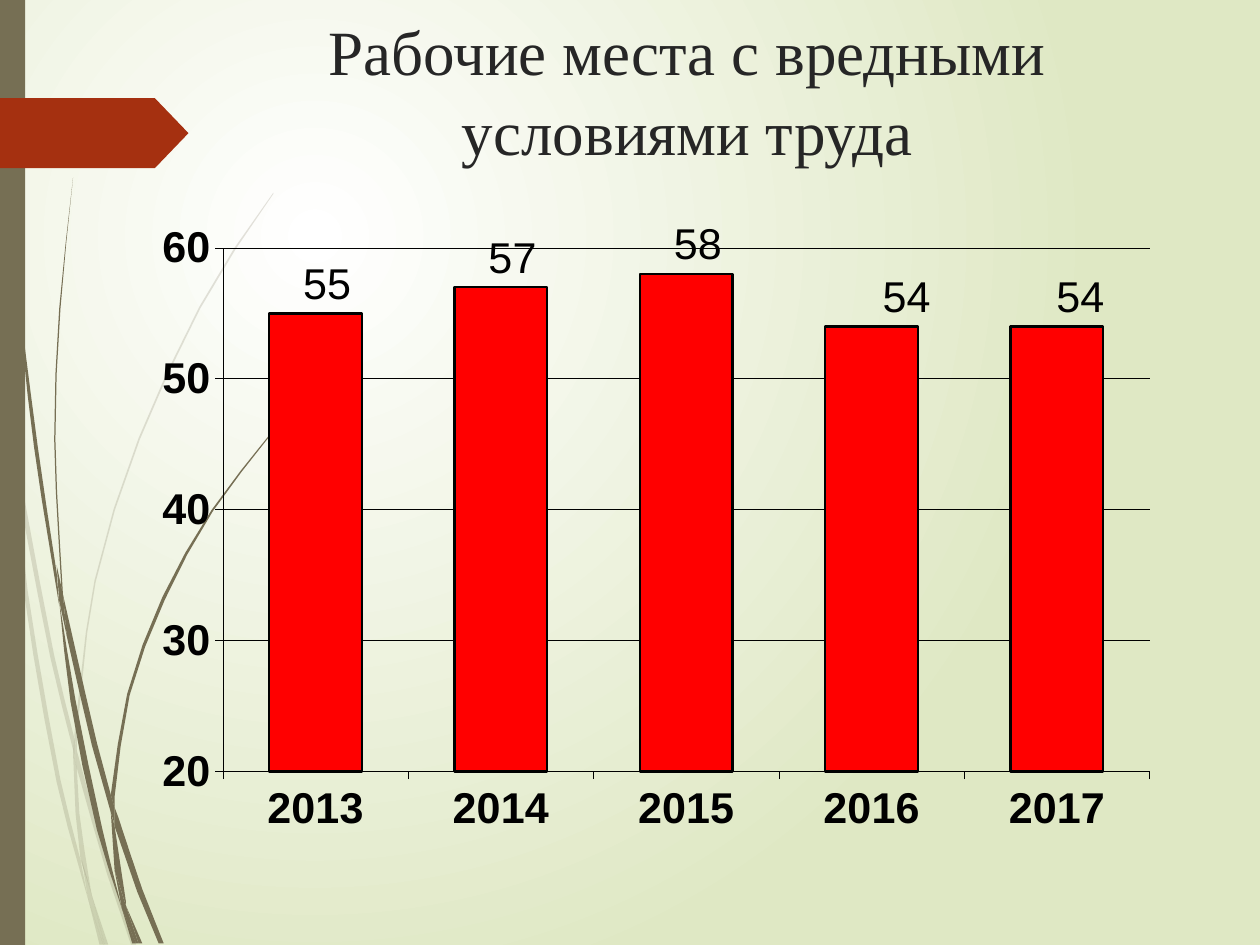
import math

import pptx
import pptx.chart.data
import pptx.dml.color
import pptx.enum.chart
import pptx.enum.shapes
import pptx.enum.text
import pptx.oxml
import pptx.oxml.ns
import pptx.util

Cm = pptx.util.Cm
Pt = pptx.util.Pt
RGBColor = pptx.dml.color.RGBColor

OLIVE = RGBColor(0x76, 0x6F, 0x54)
RUST = RGBColor(0xA5, 0x30, 0x10)
RED = RGBColor(0xFF, 0x00, 0x00)
BLACK = RGBColor(0x00, 0x00, 0x00)
WHITE = RGBColor(0xFF, 0xFF, 0xFF)
PALE_GREEN = RGBColor(0xDF, 0xE8, 0xC4)
CHARCOAL = RGBColor(0x26, 0x26, 0x26)
AXIS_SIZE = Pt(24.6)
NS = pptx.oxml.ns.nsdecls

PALE_BLADES = [
    [[(8, 350), (6, 322), (0, 282)], [(0, 299), (7, 344)]],
    [[(10, 345), (43, 520), (59, 586)], [(59, 599), (40, 522), (12, 376)]],
    [[(61, 596), (64, 607), (88, 692), (108, 750)], [(104, 750), (85, 694), (61, 610)]],
    [[(73, 711), (83, 750)], [(86, 750), (73, 711)]],
    [[(8, 350), (12, 376), (22, 469), (48, 619), (64, 683), (70, 714)],
     [(70, 714), (64, 693), (45, 621), (19, 470), (8, 350)]],
    [[(58, 599), (60, 646), (64, 683), (73, 711)], [(72, 706), (63, 646), (61, 610)]],
    [[(61, 596), (61, 584), (76, 462), (111, 349), (159, 245), (187, 198), (217, 154)],
     [(217, 153), (186, 197), (158, 244), (110, 348), (75, 461), (59, 584)]],
    [[(70, 714), (79, 750)], [(82, 750), (70, 714)]],
    [[(58, 599), (61, 610)], [(61, 596), (59, 586)]],
    [[(65, 683), (70, 714), (82, 750)], [(83, 750), (73, 711), (65, 683)]],
]
DARK_BLADES = [
    [[(2, 0), (5, 110), (14, 233), (27, 355), (47, 481)],
     [(45, 455), (30, 355), (15, 232), (6, 109), (3, 0)]],
    [[(50, 472), (77, 590), (88, 631)], [(88, 645), (73, 592), (53, 505)]],
    [[(91, 641), (94, 649), (113, 706), (130, 749)], [(126, 749), (109, 708), (91, 656)]],
    [[(47, 477), (60, 556), (81, 657), (97, 722)],
     [(97, 722), (77, 659), (56, 557), (47, 477)]],
    [[(50, 472), (44, 349), (48, 245), (58, 141)],
     [(58, 141), (47, 245), (43, 349), (49, 472)]],
    [[(100, 719), (110, 749)], [(113, 749), (100, 719)]],
    [[(45, 449), (50, 472)], [(53, 505), (47, 477)]],
    [[(91, 641), (91, 633), (103, 552), (131, 476), (169, 406), (216, 344)],
     [(215, 344), (168, 405), (129, 474), (101, 551), (88, 631)]],
    [[(97, 722), (105, 749)], [(108, 749), (97, 722)]],
    [[(88, 645), (91, 691), (100, 719)], [(100, 716), (91, 656)]],
    [[(88, 631), (91, 641), (91, 656)], [(90, 651), (88, 645)]],
    [[(91, 691), (97, 722), (108, 749)], [(110, 749), (100, 719)]],
]


def write_text(frame, text, *, font, size, color, align, line_spacing):
    frame.text = text
    paragraph = frame.paragraphs[0]
    paragraph.alignment = align
    paragraph.line_spacing = line_spacing
    paragraph.font.name = font
    paragraph.font.size = size
    paragraph.font.color.rgb = color


def smooth_edge(points):
    last = len(points) - 1
    spans = [math.dist(a, b) for a, b in zip(points, points[1:])]
    slopes = []
    for i in range(last + 1):
        before, after = max(i - 1, 0), min(i + 1, last)
        length = sum(spans[before:after])
        slopes.append([(points[after][k] - points[before][k]) / length for k in (0, 1)])
    curve = [points[0]]
    for i, span in enumerate(spans):
        steps = 1 + int(span // 60)
        for t in (step / steps for step in range(1, steps + 1)):
            curve.append(tuple(
                (2 * t**3 - 3 * t**2 + 1) * points[i][k]
                + (t**3 - 2 * t**2 + t) * span * slopes[i][k]
                + (3 * t**2 - 2 * t**3) * points[i + 1][k]
                + (t**3 - t**2) * span * slopes[i + 1][k]
                for k in (0, 1)))
    return [(10 * x, 10 * y) for x, y in curve]


deck = pptx.Presentation()
deck.slide_width, deck.slide_height = Cm(25.4), Cm(19.05)
slide = deck.slides.add_slide(deck.slide_layouts[5])

backdrop = slide.background.fill
backdrop.gradient()
for stop, color, position in zip(backdrop.gradient_stops, (WHITE, PALE_GREEN), (0, 1)):
    stop.color.rgb = color
    stop.position = position
linear = slide.background._cSld.find(".//" + pptx.oxml.ns.qn("a:lin"))
linear.getparent().replace(linear, pptx.oxml.parse_xml(
    f'<a:path {NS("a")} path="circle">'
    '<a:fillToRect l="50000" t="50000" r="100000" b="100000"/></a:path>'))

for blades, alpha in ((PALE_BLADES, 20000), (DARK_BLADES, 100000)):
    grass = slide.shapes.add_group_shape()
    for edges in blades:
        outline = [point for edge in edges for point in smooth_edge(edge)]
        builder = grass.shapes.build_freeform(*outline[0], scale=Cm(0.00254))
        builder.add_line_segments(outline[1:], close=True)
        blade = builder.convert_to_shape()
        blade.shadow.inherit = False
        blade.fill.solid()
        blade.fill.fore_color.rgb = OLIVE
        blade.line.fill.background()
        tint = blade.fill._xPr.find(".//" + pptx.oxml.ns.qn("a:srgbClr"))
        tint.append(pptx.oxml.parse_xml(f'<a:alpha {NS("a")} val="{alpha}"/>'))

PRESETS = pptx.enum.shapes.MSO_SHAPE
for preset, top, width, height, color in (
    (PRESETS.RECTANGLE, 0, 0.51, 19.05, OLIVE),
    (PRESETS.PENTAGON, 1.98, 3.8, 1.41, RUST),
):
    accent = slide.shapes.add_shape(preset, 0, Cm(top), Cm(width), Cm(height))
    accent.shadow.inherit = False
    accent.fill.solid()
    accent.fill.fore_color.rgb = color
    accent.line.fill.background()
accent.adjustments[0] = 0.48

title = slide.shapes.title
title.left, title.top, title.width, title.height = Cm(4.7), 0, Cm(18.31), Cm(3.56)
title.text_frame.vertical_anchor = pptx.enum.text.MSO_ANCHOR.MIDDLE
write_text(title.text_frame, "Рабочие места с вредными условиями труда",
           font="Times New Roman", size=Pt(36), color=CHARCOAL,
           align=pptx.enum.text.PP_ALIGN.CENTER, line_spacing=1.05)

workplaces = pptx.chart.data.CategoryChartData()
workplaces.categories = ["2013", "2014", "2015", "2016", "2017"]
workplaces.add_series("Series 1", (55, 57, 58, 54, 54))
chart = slide.shapes.add_chart(
    pptx.enum.chart.XL_CHART_TYPE.COLUMN_CLUSTERED,
    0, Cm(4.32), Cm(23.65), Cm(13.54), workplaces).chart
chart.has_legend = False
chart.has_title = False
chart.font.name = "Arial"
chart.font.size = AXIS_SIZE
chart.font.bold = True
chart.font.color.rgb = BLACK

years, counts = chart.category_axis, chart.value_axis
years.tick_label_position = pptx.enum.chart.XL_TICK_LABEL_POSITION.LOW
counts.minimum_scale, counts.maximum_scale, counts.major_unit = 20, 60, 10
for axis in (years, counts):
    axis.major_tick_mark = pptx.enum.chart.XL_TICK_MARK.OUTSIDE
for rule in (years.format.line, counts.format.line, counts.major_gridlines.format.line):
    rule.color.rgb = BLACK
    rule.width = Pt(0.34)

plot = chart.plots[0]
plot.gap_width = 100
plot.vary_by_categories = False
bars = plot.series[0]
bars.format.fill.solid()
bars.format.fill.fore_color.rgb = RED
bars.format.line.color.rgb = BLACK
bars.format.line.width = Pt(1.35)

bars.data_labels.show_value = True
for index, shift in enumerate((0.01, 0.01, 0.01, 0.03, 0.02)):
    label = bars.points[index].data_label
    label.font.bold = False
    label.font.size = AXIS_SIZE
    label.font.color.rgb = BLACK
    label.position = pptx.enum.chart.XL_LABEL_POSITION.OUTSIDE_END
    bars.data_labels._element.findall(pptx.oxml.ns.qn("c:dLbl"))[index].insert(
        1, pptx.oxml.parse_xml(
            f'<c:layout {NS("c")}><c:manualLayout><c:x val="{shift}"/>'
            '<c:y val="0"/></c:manualLayout></c:layout>'))

plot_area = chart._chartSpace.chart.plotArea
for old_layout in plot_area.findall(pptx.oxml.ns.qn("c:layout")):
    plot_area.remove(old_layout)
plot_area.insert(0, pptx.oxml.parse_xml(
    f'<c:layout {NS("c")}><c:manualLayout><c:layoutTarget val="inner"/>'
    '<c:xMode val="edge"/><c:yMode val="edge"/><c:x val="0.19"/><c:y val="0.05"/>'
    '<c:w val="0.79"/><c:h val="0.78"/></c:manualLayout></c:layout>'))

deck.save("out.pptx")
